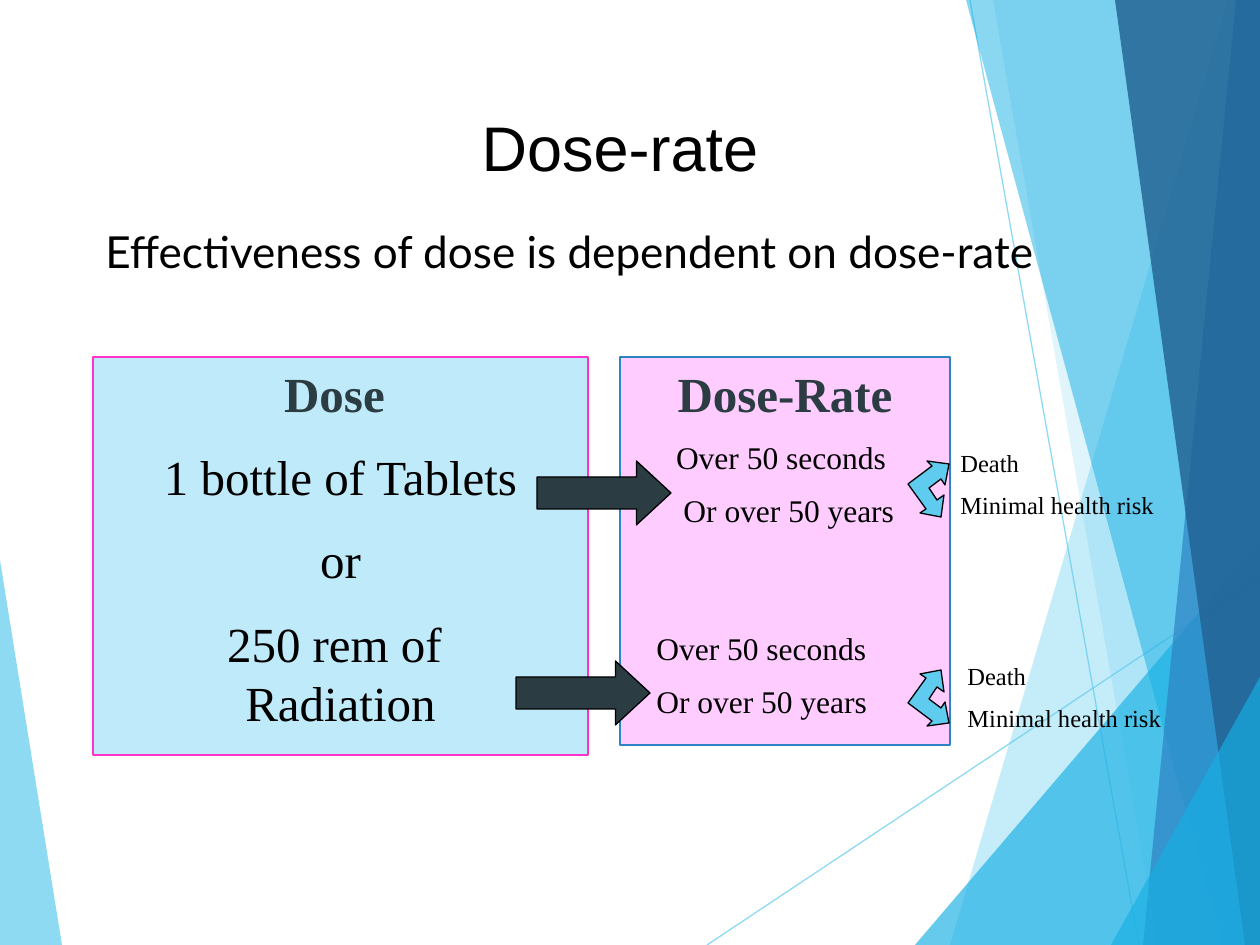
import dataclasses

import lxml.etree
import pptx
import pptx.dml.color
import pptx.enum.shapes
import pptx.enum.text
import pptx.oxml.ns
import pptx.util

RGBColor = pptx.dml.color.RGBColor
Align = pptx.enum.text.PP_ALIGN
Preset = pptx.enum.shapes.MSO_SHAPE
qn = pptx.oxml.ns.qn

EMU_PER_PX = 914400 / 126
WIDTH, HEIGHT = 1260, 945
BLACK = RGBColor(0x00, 0x00, 0x00)
SLATE = RGBColor(0x2C, 0x3C, 0x43)
SKY = RGBColor(0x5F, 0xCB, 0xEF)
CYAN = RGBColor(0x17, 0xB0, 0xE4)
BLUE = RGBColor(0x2E, 0x83, 0xC3)
NAVY = RGBColor(0x22, 0x62, 0x92)
PALE_BLUE = RGBColor(0xBF, 0xEA, 0xF9)
PALE_PINK = RGBColor(0xFF, 0xCC, 0xFF)
MAGENTA = RGBColor(0xFF, 0x33, 0xCC)
SERIF = "Times New Roman"
Points = list[tuple[int, int]]


@dataclasses.dataclass
class Facet:
    points: Points
    color: RGBColor
    opacity: int


@dataclasses.dataclass
class Line:
    text: str
    size: float
    color: RGBColor = BLACK
    font: str = SERIF
    bold: bool = False
    align: Align = Align.LEFT
    gap: int | None = None
    indent: int = 0


@dataclasses.dataclass
class Block:
    left: int
    top: int
    width: int
    height: int
    lines: list[Line]
    fill: RGBColor | None = None
    outline: RGBColor | None = None


FACETS = [
    Facet([(0, 560), (62, HEIGHT), (0, HEIGHT)], SKY, 70),
    Facet([(1228, 0), (950, HEIGHT), (WIDTH, HEIGHT), (WIDTH, 0)], SKY, 36),
    Facet([(993, 0), (1158, HEIGHT), (WIDTH, HEIGHT), (WIDTH, 0)], SKY, 20),
    Facet([(915, HEIGHT), (WIDTH, 541), (WIDTH, HEIGHT)], CYAN, 66),
    Facet([(966, 0), (1222, HEIGHT), (WIDTH, HEIGHT), (WIDTH, 0)], CYAN, 50),
    Facet([(1236, 0), (1143, HEIGHT), (WIDTH, HEIGHT), (WIDTH, 0)], BLUE, 70),
    Facet([(1115, 0), (1245, HEIGHT), (WIDTH, HEIGHT), (WIDTH, 0)], NAVY, 82),
    Facet([(1111, HEIGHT), (WIDTH, 677), (WIDTH, HEIGHT)], CYAN, 66),
]
RAYS = [(707, HEIGHT, WIDTH, 577), (970, 0, 1139, HEIGHT)]
OUTCOMES = [Line("Death", 14), Line("Minimal health risk", 14)]
BLOCKS = [
    Block(93, 218, 1030, 89,
          [Line("Effectiveness of dose is dependent on dose-rate", 25.2, font="Lato", gap=0)]),
    Block(121, 102, 998, 89, [Line("Dose-rate", 36, font="Arial", align=Align.CENTER)]),
    Block(948, 442, 249, 87, OUTCOMES),
    Block(955, 655, 232, 87, OUTCOMES),
    Block(93, 357, 495, 398, [
        Line("Dose ", 28, SLATE, bold=True, align=Align.CENTER),
        Line("1 bottle of Tablets", 28, align=Align.CENTER),
        Line("or", 28, align=Align.CENTER),
        Line("250 rem of ", 28, align=Align.CENTER),
        Line("Radiation", 28, align=Align.CENTER, gap=0),
    ], PALE_BLUE, MAGENTA),
    Block(620, 357, 330, 388, [
        Line("Dose-Rate", 28, SLATE, bold=True, align=Align.CENTER),
        Line("Over 50 seconds ", 18, align=Align.CENTER),
        Line(" Or over 50 years", 18, align=Align.CENTER),
        Line("Over 50 seconds", 18, gap=57, indent=24),
        Line("Or over 50 years", 18, indent=24),
    ], PALE_PINK, BLUE),
]
ARROWS = [(516, 661), (537, 461)]
FORK = [(941, 517), (944, 495), (937, 500), (929, 488), (941, 479), (945, 485),
        (949, 464), (927, 461), (932, 466), (908, 484), (926, 509), (920, 513)]
FORK_MIRROR_SUM = 1187


def px(length: int) -> int:
    return round(length * EMU_PER_PX)


def set_opacity(shape, percent: int) -> None:
    color = shape._element.spPr.find(".//" + qn("a:srgbClr"))
    lxml.etree.SubElement(color, qn("a:alpha"), val=str(percent * 1000))


def set_outline(shape, color: RGBColor) -> None:
    shape.line.color.rgb = color
    shape.line.width = pptx.util.Pt(0.75)


def draw_polygon(page, points: Points, color: RGBColor):
    builder = page.shapes.build_freeform(*points[0], scale=EMU_PER_PX)
    builder.add_line_segments(points[1:], close=True)
    shape = builder.convert_to_shape()
    shape.shadow.inherit = False
    shape.fill.solid()
    shape.fill.fore_color.rgb = color
    shape.line.fill.background()
    return shape


def draw_ray(page, ends: tuple[int, int, int, int]) -> None:
    ray = page.shapes.add_connector(
        pptx.enum.shapes.MSO_CONNECTOR.STRAIGHT, *map(px, ends))
    set_outline(ray, SKY)
    set_opacity(ray, 70)
    lxml.etree.SubElement(ray._element.spPr, qn("a:effectLst"))


def write_line(para, line: Line) -> None:
    para.text = line.text
    para.alignment = line.align
    para.font.size = pptx.util.Pt(line.size)
    para.font.name = line.font
    para.font.bold = line.bold
    para.font.color.rgb = line.color
    properties = para._p.get_or_add_pPr()
    if line.indent:
        properties.set("marL", str(px(line.indent)))
    if line.gap is None:
        spacing = properties.get_or_add_spcBef()
        lxml.etree.SubElement(spacing, qn("a:spcPct"), val="50000")
    else:
        para.space_before = pptx.util.Pt(line.gap)


def draw_block(page, block: Block) -> None:
    place = [px(n) for n in (block.left, block.top, block.width, block.height)]
    if block.fill is None:
        box = page.shapes.add_textbox(*place)
    else:
        box = page.shapes.add_shape(Preset.RECTANGLE, *place)
        box.shadow.inherit = False
        box.fill.solid()
        box.fill.fore_color.rgb = block.fill
        set_outline(box, block.outline)
    frame = box.text_frame
    frame.word_wrap = True
    frame.vertical_anchor = pptx.enum.text.MSO_ANCHOR.TOP
    for index, line in enumerate(block.lines):
        write_line(frame.add_paragraph() if index else frame.paragraphs[0], line)


def draw_arrow(page, left: int, top: int) -> None:
    arrow = page.shapes.add_shape(
        Preset.RIGHT_ARROW, px(left), px(top), px(134), px(64))
    arrow.shadow.inherit = False
    arrow.adjustments[1] = 0.54
    arrow.fill.solid()
    arrow.fill.fore_color.rgb = SLATE
    set_outline(arrow, BLACK)


def main() -> None:
    deck = pptx.Presentation()
    deck.slide_width, deck.slide_height = px(WIDTH), px(HEIGHT)
    page = deck.slides.add_slide(deck.slide_layouts[6])
    for ray in RAYS:
        draw_ray(page, ray)
    for facet in FACETS:
        set_opacity(draw_polygon(page, facet.points, facet.color), facet.opacity)
    for block in BLOCKS:
        draw_block(page, block)
    for left, top in ARROWS:
        draw_arrow(page, left, top)
    for points in (FORK, [(x, FORK_MIRROR_SUM - y) for x, y in FORK]):
        set_outline(draw_polygon(page, points, SKY), BLACK)
    deck.save("out.pptx")


if __name__ == "__main__":
    main()
